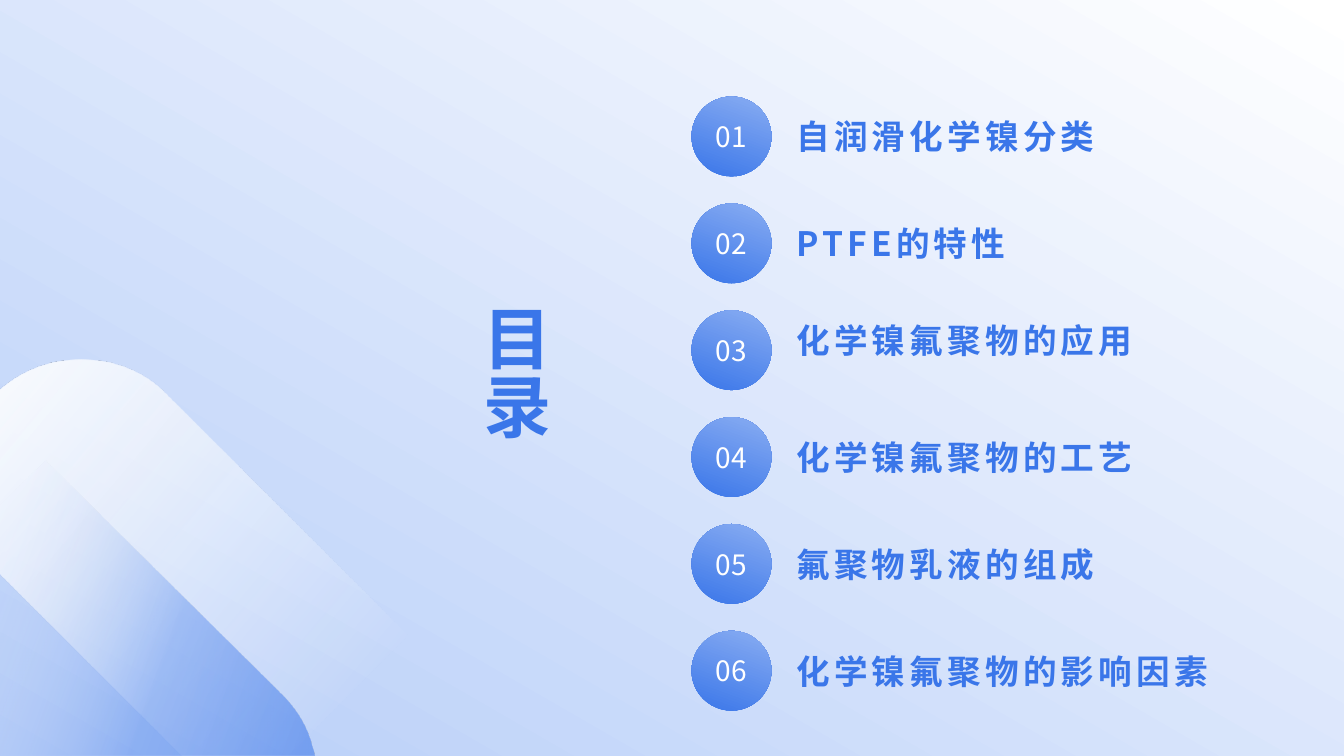
from lxml import etree
from pptx import Presentation
from pptx.dml.color import RGBColor
from pptx.enum.shapes import MSO_SHAPE
from pptx.enum.text import MSO_ANCHOR, PP_ALIGN
from pptx.oxml.ns import qn
from pptx.util import Pt

RECT, OVAL = MSO_SHAPE.RECTANGLE, MSO_SHAPE.OVAL
MIDDLE = MSO_ANCHOR.MIDDLE
LEFT, CENTER = PP_ALIGN.LEFT, PP_ALIGN.CENTER
FONT = "Noto Sans CJK SC"
COLORS = {
    "base": "D8E4FB",
    "mist": "B6CDF8",
    "white": "FFFFFF",
    "frost": "F9FBFE",
    "haze": "FBFCFF",
    "blue": "3A76E9",
    "sky": "89ADF2",
}


def paint_gradient(shape, angle, *stops):
    """Fill with (position %, colour, opacity %) stops; angle is clockwise degrees."""
    shape.shadow.inherit = False
    shape.line.fill.background()
    shape.fill.background()
    blank = shape._element.spPr.find(qn("a:noFill"))
    gradient = etree.Element(qn("a:gradFill"), rotWithShape="1")
    stop_list = etree.SubElement(gradient, qn("a:gsLst"))
    for position, color, opacity in stops:
        stop = etree.SubElement(stop_list, qn("a:gs"), pos=str(position * 1000))
        tint = etree.SubElement(stop, qn("a:srgbClr"), val=COLORS[color])
        if opacity < 100:
            etree.SubElement(tint, qn("a:alpha"), val=str(opacity * 1000))
    etree.SubElement(gradient, qn("a:lin"), ang=str(angle * 60000), scaled="0")
    blank.getparent().replace(blank, gradient)


def write(shape, text, size, color="blue", bold=True, spacing=3, align=LEFT,
          wrap=True, line_spacing=None):
    frame = shape.text_frame
    frame.word_wrap = wrap
    frame.vertical_anchor = MIDDLE
    frame.margin_left = frame.margin_right = frame.margin_top = frame.margin_bottom = 0
    paragraph = frame.paragraphs[0]
    paragraph.alignment = align
    paragraph.line_spacing = line_spacing
    run = paragraph.add_run()
    run.text = text
    run.font.size = Pt(size)
    run.font.bold = bold
    run.font.name = FONT
    run.font.color.rgb = RGBColor.from_string(COLORS[color])
    properties = run._r.get_or_add_rPr()
    properties.set("spc", str(spacing * 100))
    etree.SubElement(properties, qn("a:ea"), typeface=FONT)


prs = Presentation()
prs.slide_width, prs.slide_height = Pt(960), Pt(540)
slide = prs.slides.add_slide(prs.slide_layouts[6])
slide.background.fill.solid()
slide.background.fill.fore_color.rgb = RGBColor.from_string(COLORS["base"])
shapes = slide.shapes

backdrop = shapes.add_shape(RECT, 0, 0, Pt(960), Pt(540))
paint_gradient(backdrop, 300, (0, "mist", 100), (100, "white", 100))

# Each outline step is a line's end (x, y) or a curve's two controls and end.
bands = [
    ([(58.3, 257), (80.6, 257, 103, 265, 119.5, 282.2), (290.9, 453.6),
      (205.2, 540), (130.3, 540), (0, 409.7), (0, 278.6), (2.9, 276.5),
      (18.7, 263.5, 38.2, 257, 58.3, 257)],
     40, [(0, "frost", 100), (87, "haze", 0)]),
    ([(32.4, 329), (200.9, 496.1), (211.7, 506.9, 218.9, 519.1, 222.5, 532.8),
      (224.6, 540), (0, 540), (0, 360.7)],
     20, [(0, "white", 0), (56, "blue", 34), (98, "blue", 55)]),
]
CURVE_STEPS = 16
for outline, angle, stops in bands:
    points = [outline[0]]
    for step in outline[1:]:
        if len(step) == 2:
            points.append(step)
            continue
        x0, y0 = points[-1]
        x1, y1, x2, y2, x3, y3 = step
        for i in range(1, CURVE_STEPS + 1):
            t = i / CURVE_STEPS
            a, b, c, d = (1 - t) ** 3, 3 * t * (1 - t) ** 2, 3 * t * t * (1 - t), t ** 3
            points.append((a * x0 + b * x1 + c * x2 + d * x3,
                           a * y0 + b * y1 + c * y2 + d * y3))
    corners = [(Pt(x), Pt(y)) for x, y in points]
    builder = shapes.build_freeform(*corners[0])
    builder.add_line_segments(corners[1:], close=True)
    paint_gradient(builder.convert_to_shape(), angle, *stops)

heading = shapes.add_textbox(Pt(345.6), Pt(222.5), Pt(61.2), Pt(95.8))
write(heading, "目录", 48.6, line_spacing=0.83)

# Chapter title and its vertical shift from the row
chapters = [
    ("自润滑化学镍分类", 0),
    ("PTFE的特性", 0),
    ("化学镍氟聚物的应用", -7.5),
    ("化学镍氟聚物的工艺", 0),
    ("氟聚物乳液的组成", 0),
    ("化学镍氟聚物的影响因素", 0),
]
FIRST_TOP, PITCH, DIAMETER = 69, 76.32, 57
for row, (chapter, shift) in enumerate(chapters):
    top = FIRST_TOP + row * PITCH
    badge = shapes.add_shape(OVAL, Pt(494), Pt(top), Pt(DIAMETER), Pt(DIAMETER))
    paint_gradient(badge, 290, (0, "blue", 100), (100, "sky", 100))
    write(badge, f"{row + 1:02}", 20, color="white", bold=False, spacing=0,
          align=CENTER, wrap=False)
    label = shapes.add_textbox(Pt(568.8), Pt(top + shift), Pt(321.8), Pt(DIAMETER))
    write(label, chapter, 24)

prs.save("out.pptx")
